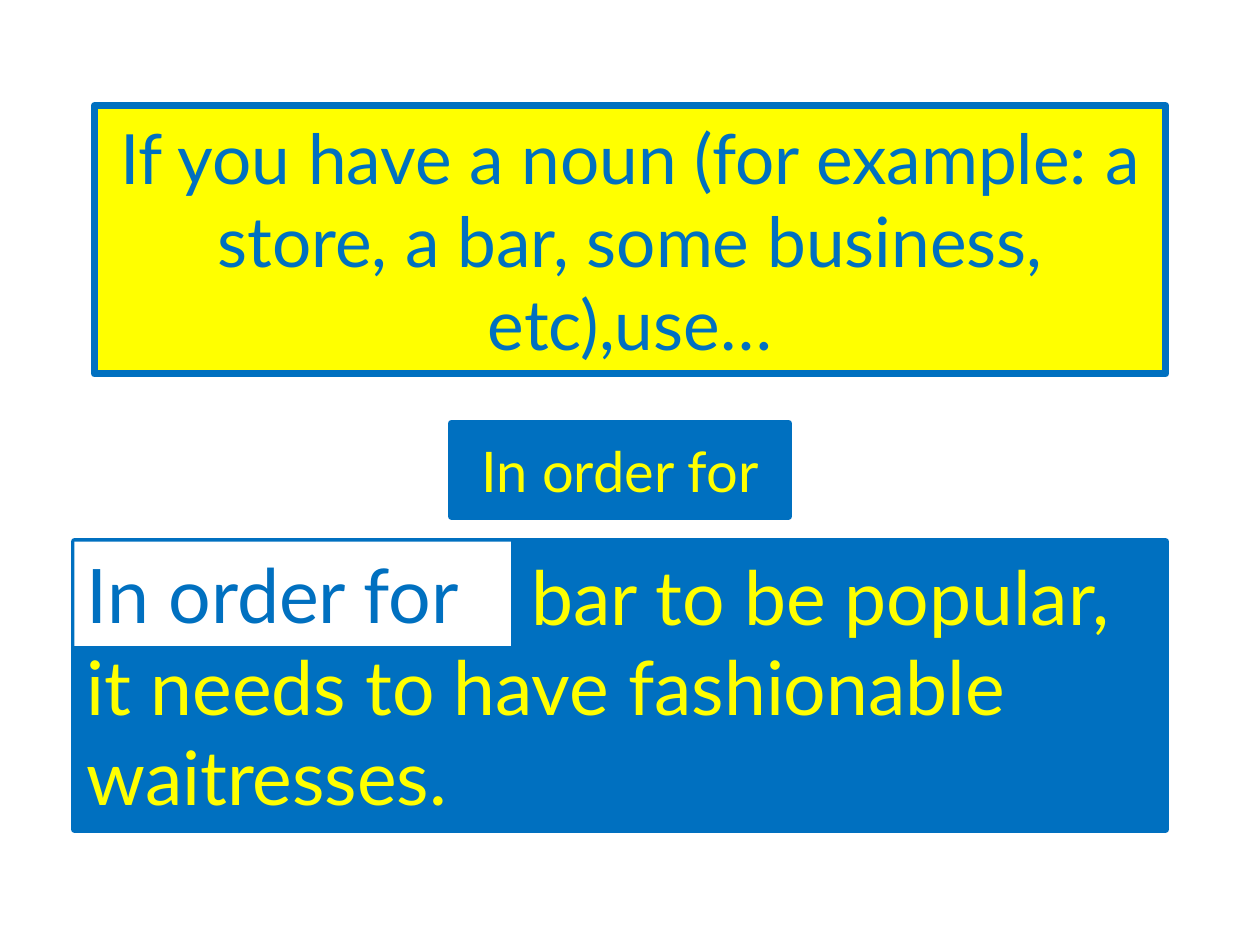
from pptx import Presentation
from pptx import util as u
from pptx.dml.color import RGBColor
from pptx.enum import shapes, text

BLUE, YELLOW, WHITE = "0070C0", "FFFF00", "FFFFFF"
FONT = "Lato"


def rgb(value):
    return RGBColor.from_string(value)


def place(sp, box):
    sp.left, sp.top, sp.width, sp.height = (u.Cm(v) for v in box)


def style_box(sp, fill, outline=None):
    sp.fill.solid()
    sp.fill.fore_color.rgb = rgb(fill)
    if outline:
        sp.line.color.rgb = rgb(outline)
        sp.line.width = u.Pt(4)


def write(sp, words, size, color, align, anchor=text.MSO_ANCHOR.MIDDLE):
    tf = sp.text_frame
    tf.word_wrap = True
    tf.auto_size = text.MSO_AUTO_SIZE.NONE
    tf.vertical_anchor = anchor
    p = tf.paragraphs[0]
    p.alignment = align
    r = p.add_run()
    r.text = words
    r.font.name = FONT
    r.font.size = u.Pt(size)
    r.font.color.rgb = rgb(color)
    return p


def add_rule(s, box):
    """Title placeholder stating when to use the phrase."""
    sp = s.shapes.title
    place(sp, box)
    style_box(sp, YELLOW, BLUE)
    write(sp, "If you have a noun (for example: a store, a bar, some business, etc),use…",
          39.6, BLUE, text.PP_ALIGN.CENTER)


def add_panel(s, box, words, size, align):
    """Blue panel with yellow words; returns its paragraph."""
    sp = s.shapes.add_shape(shapes.MSO_SHAPE.RECTANGLE, *(u.Cm(v) for v in box))
    sp.shadow.inherit = False
    style_box(sp, BLUE, BLUE)
    return write(sp, words, size, YELLOW, align)


def add_example(s, box):
    """Example sentence that continues from a white label with its opening phrase."""
    left, top, _, _ = box
    p = add_panel(s, box, "bar to be popular, it needs to have fashionable waitresses.",
                  42.9, text.PP_ALIGN.LEFT)
    # First line starts to the right of the label
    pPr = p._p.get_or_add_pPr()
    pPr.set("marL", "0")
    pPr.set("indent", str(u.Cm(8.97)))

    label = s.shapes.add_textbox(u.Cm(left), u.Cm(top), u.Cm(8.8), u.Cm(2.1))
    style_box(label, WHITE)
    write(label, "In order for", 43, BLUE, text.PP_ALIGN.LEFT, text.MSO_ANCHOR.TOP)


def main():
    prs = Presentation()
    prs.slide_width, prs.slide_height = u.Cm(25.4), u.Cm(19.05)
    s = prs.slides.add_slide(prs.slide_layouts[5])  # title only

    # Rule, phrase and example, from top to bottom
    add_rule(s, (1.9, 2.13, 21.6, 5.41))
    add_panel(s, (9.1, 8.53, 6.8, 1.88), "In order for", 32, text.PP_ALIGN.CENTER)
    add_example(s, (1.5, 10.92, 22, 5.8))

    prs.save("out.pptx")


if __name__ == "__main__":
    main()
